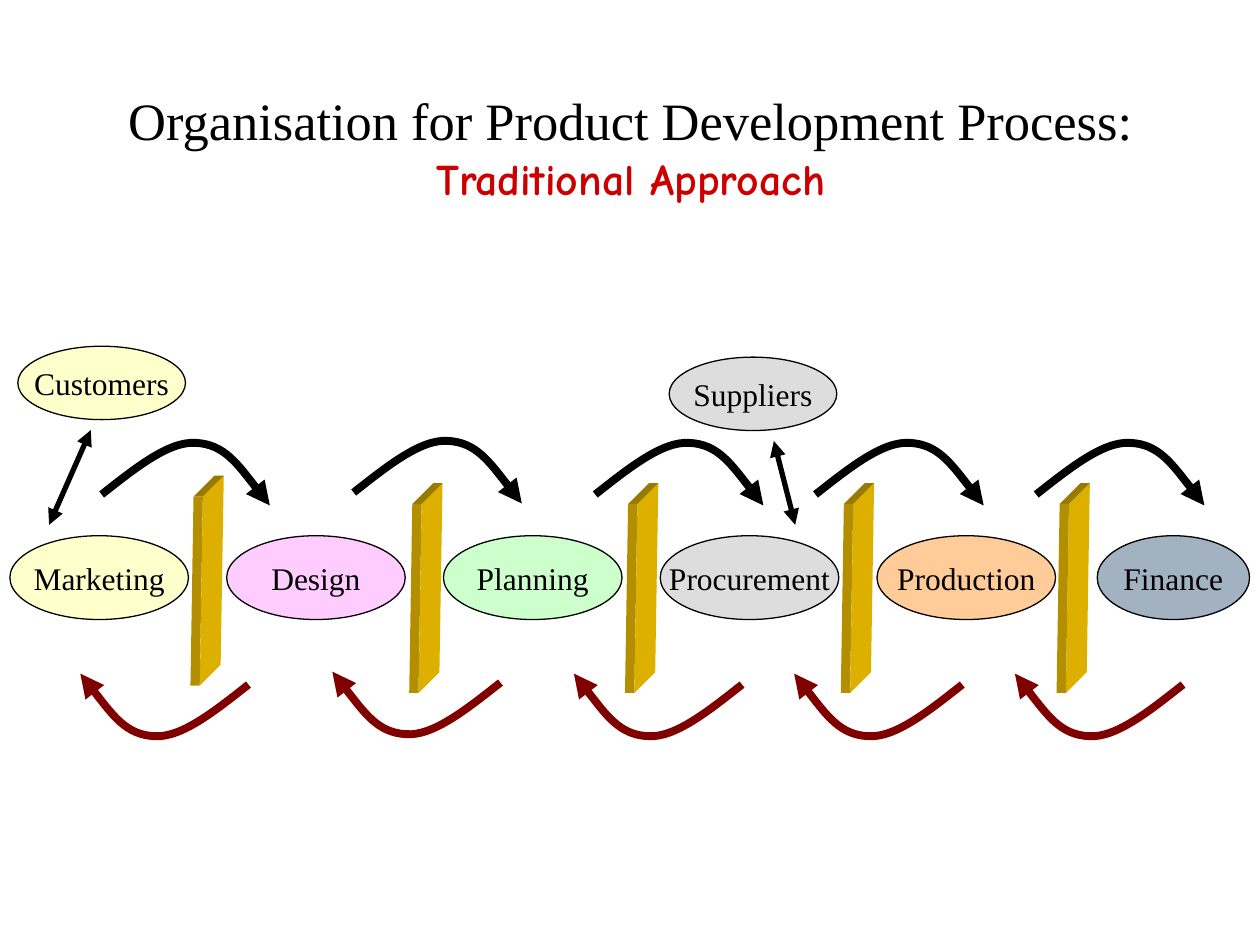
import pptx
import pptx.dml.color
import pptx.enum.shapes
import pptx.enum.text
import pptx.oxml.ns
import pptx.util
from lxml import etree

Cm = pptx.util.Cm
Pt = pptx.util.Pt
RGBColor = pptx.dml.color.RGBColor
MSO_SHAPE = pptx.enum.shapes.MSO_SHAPE
qn = pptx.oxml.ns.qn

BLACK = RGBColor(0x00, 0x00, 0x00)
RED = RGBColor(0xCC, 0x00, 0x00)
MAROON = RGBColor(0x80, 0x00, 0x00)
CREAM = RGBColor(0xFF, 0xFF, 0xCC)
PINK = RGBColor(0xFF, 0xCC, 0xFF)
GREEN = RGBColor(0xCC, 0xFF, 0xCC)
GREY = RGBColor(0xDD, 0xDD, 0xDD)
PEACH = RGBColor(0xFF, 0xCC, 0x99)
SLATE = RGBColor(0xA3, 0xB2, 0xC1)
GOLD = RGBColor(0xDD, 0xB0, 0x00)
OCHRE = RGBColor(0xB3, 0x8F, 0x00)
BRONZE = RGBColor(0x99, 0x7A, 0x00)

SERIF = "Times New Roman"
COMIC = "Comic Neue"
BEND = [(0, 0.83), (0.2, 0.42), (0.4, 0), (0.56, 0.03),
        (0.73, 0.05), (0.86, 0.53), (1, 1)]
STAGES = [("Marketing", CREAM, 0.2, 3.6), ("Design", PINK, 4.57, 3.6),
          ("Planning", GREEN, 8.94, 3.6), ("Procurement", GREY, 13.31, 3.6),
          ("Production", PEACH, 17.68, 3.6), ("Finance", SLATE, 22.12, 3.07)]
WALLS = [(3.84, 10.01)] + [(8.25 + 4.35 * i, 10.16) for i in range(4)]
ARCS = [(2.05, 0), (7.13, -0.04), (12, 0), (16.44, 0), (20.89, 0)]


def style(run, font, size, color, bold=False):
    """Format one run of text."""
    run.font.name = font
    run.font.size = Pt(size)
    run.font.color.rgb = color
    run.font.bold = bold


def stroke(shape, color, width, *ends):
    """Draw the line of a shape, with arrowheads at the given ends."""
    shape.line.color.rgb = color
    shape.line.width = Pt(width)
    for end in ends:
        etree.SubElement(shape.line._get_or_add_ln(), qn(f"a:{end}"), type="triangle")


def paint(shape, color):
    """Fill a shape flatly, without outline or shadow."""
    shape.shadow.inherit = False
    shape.fill.solid()
    shape.fill.fore_color.rgb = color
    shape.line.fill.background()


def trace(shapes, points, close):
    """Build an outline through points given in centimetres."""
    dots = [(Cm(x), Cm(y)) for x, y in points]
    pen = shapes.build_freeform(*dots[0])
    pen.add_line_segments(dots[1:], close=close)
    return pen.convert_to_shape()


def head(slide, box):
    """Place the two-tone title in its box."""
    title = slide.shapes.title
    title.left, title.top, title.width, title.height = map(Cm, box)
    frame = title.text_frame
    frame.text = "Organisation for Product Development Process: "
    frame.word_wrap = True
    frame.auto_size = pptx.enum.text.MSO_AUTO_SIZE.NONE
    frame.vertical_anchor = pptx.enum.text.MSO_ANCHOR.BOTTOM
    para = frame.paragraphs[0]
    para.alignment = pptx.enum.text.PP_ALIGN.CENTER
    style(para.runs[0], SERIF, 30, BLACK)
    sub = para.add_run()
    sub.text = "Traditional Approach"
    style(sub, COMIC, 25, RED, True)


def oval(shapes, box, text, color):
    """Place a labelled oval in its box."""
    shape = shapes.add_shape(MSO_SHAPE.OVAL, *map(Cm, box))
    paint(shape, color)
    stroke(shape, BLACK, 0.75)
    frame = shape.text_frame
    frame.text = text
    frame.word_wrap = False
    frame.vertical_anchor = pptx.enum.text.MSO_ANCHOR.MIDDLE
    para = frame.paragraphs[0]
    para.alignment = pptx.enum.text.PP_ALIGN.CENTER
    style(para.runs[0], SERIF, 18, BLACK)


def wall(shapes, box, depth=0.42):
    """Place a solid wall whose front fills the box."""
    left, top, width, height = box
    right, base, lean = left + width, top + height, width / 4
    back = top - depth
    side = [(right, top), (right + depth, back),
            (right + depth - lean, base - depth), (right - lean, base)]
    lid = [(left + lean, top), (left + lean + depth, back),
           (right + depth, back), (right, top)]
    paint(trace(shapes, side, True), GOLD)
    paint(trace(shapes, lid, True), BRONZE)
    front = shapes.add_shape(MSO_SHAPE.PARALLELOGRAM, *map(Cm, box))
    front.adjustments[0] = 0.25
    paint(front, OCHRE)


def arc(shapes, box, color, turn=False):
    """Place a curved arrow in its box, turned half round if asked."""
    left, top, width, height = box
    bend = [(1 - x, 1 - y) for x, y in BEND] if turn else BEND
    shape = trace(shapes, [(left + x * width, top + y * height) for x, y in bend], False)
    shape.shadow.inherit = False
    shape.fill.background()
    stroke(shape, color, 4.5, "tailEnd")
    route = next(shape._element.iter(qn("a:path")))
    steps = route.findall(qn("a:lnTo"))
    for start in (0, 3):
        curve = etree.SubElement(route, qn("a:cubicBezTo"))
        for step in steps[start:start + 3]:
            curve.append(step[0])
            route.remove(step)


def link(shapes, start, end):
    """Join two points with a double-headed arrow."""
    line = shapes.add_connector(
        pptx.enum.shapes.MSO_CONNECTOR.STRAIGHT, *map(Cm, start + end))
    stroke(line, BLACK, 3, "headEnd", "tailEnd")
    etree.SubElement(line._element.spPr, qn("a:effectLst"))


def main():
    """Build and save the slide."""
    deck = pptx.Presentation()
    deck.slide_width, deck.slide_height = Cm(25.4), Cm(19.05)
    slide = deck.slides.add_slide(deck.slide_layouts[5])
    shapes = slide.shapes
    head(slide, (1.6, 0.85, 22.23, 3.39))
    for text, color, left, width in STAGES:
        oval(shapes, (left, 10.8, width, 1.69), text, color)
    oval(shapes, (0.36, 6.98, 3.38, 1.48), "Customers", CREAM)
    oval(shapes, (13.49, 7.2, 3.38, 1.48), "Suppliers", GREY)
    for left, top in WALLS:
        wall(shapes, (left, top, 0.25, 3.81))
    for left, shift in ARCS:
        arc(shapes, (left, 8.89 + shift, 3.39, 1.3), BLACK)
        arc(shapes, (left - 0.43, 13.58 + shift, 3.39, 1.3), MAROON, True)
    link(shapes, (0.99, 10.58), (1.83, 8.67))
    link(shapes, (16.03, 10.58), (15.6, 8.89))
    deck.save("out.pptx")


if __name__ == "__main__":
    main()
